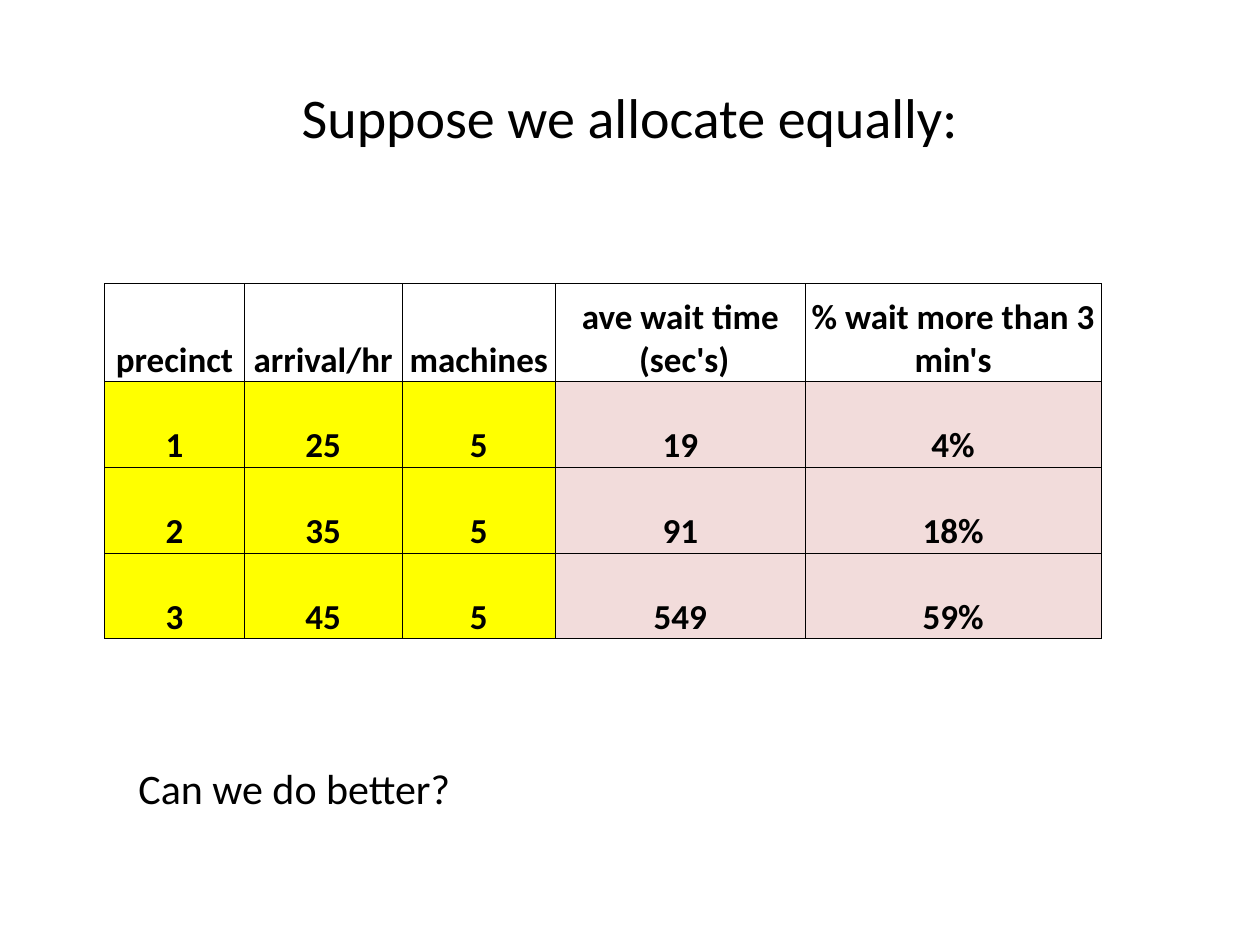
from lxml.etree import SubElement
from pptx import Presentation
from pptx.dml.color import RGBColor
from pptx.enum.text import MSO_ANCHOR, PP_ALIGN
from pptx.oxml.ns import qn
from pptx.util import Inches, Pt

BLACK = RGBColor(0, 0, 0)
YELLOW = RGBColor(0xFF, 0xFF, 0)
PINK = RGBColor(0xF2, 0xDC, 0xDB)

WIDTHS = [1.11, 1.25, 1.22, 1.98, 2.35]
HEIGHTS = [0.78, 0.68, 0.68, 0.68]
FILLS = [YELLOW] * 3 + [PINK] * 2
ROWS = [
    ["precinct", "arrival/hr", "machines", "ave wait time\n (sec's)",
     "% wait more than 3 min's"],
    ["1", "25", "5", "19", "4%"],
    ["2", "35", "5", "91", "18%"],
    ["3", "45", "5", "549", "59%"],
]


def assign(item, values):
    for name, value in values.items():
        setattr(item, name, value)


class Deck:
    font = "Calibri"
    color = BLACK
    line = Pt(0.5)

    def __init__(self):
        self.prs = Presentation()
        assign(self.prs, {"slide_width": Inches(10), "slide_height": Inches(7.5)})
        self.slide = self.prs.slides.add_slide(self.prs.slide_layouts[5])

    def label(self, frame, text, size, align, bold=False):
        frame.text = text
        for para in frame.paragraphs:
            para.alignment = align
            for run in para.runs:
                assign(run.font, {"name": self.font, "size": Pt(size), "bold": bold})
                run.font.color.rgb = self.color

    def title(self, text, left, top, width, height):
        shape = self.slide.shapes.title
        assign(shape, {"left": Inches(left), "top": Inches(top),
                       "width": Inches(width), "height": Inches(height)})
        shape.text_frame.vertical_anchor = MSO_ANCHOR.MIDDLE
        self.label(shape.text_frame, text, 32, PP_ALIGN.CENTER)

    def text(self, text, left, top, width, height):
        box = self.slide.shapes.add_textbox(*map(Inches, (left, top, width, height)))
        box.text_frame.word_wrap = True
        self.label(box.text_frame, text, 24, PP_ALIGN.LEFT)

    def border(self, cell):
        props = cell._tc.get_or_add_tcPr()
        for side in ("lnL", "lnR", "lnT", "lnB"):
            edge = SubElement(props, qn(f"a:{side}"), w=str(self.line))
            fill = SubElement(edge, qn("a:solidFill"))
            SubElement(fill, qn("a:srgbClr"), val=str(self.color))

    def cell(self, cell, text, fill):
        assign(cell, {"vertical_anchor": MSO_ANCHOR.BOTTOM,
                      "margin_left": Inches(0.01), "margin_right": Inches(0.01),
                      "margin_top": Inches(0.01), "margin_bottom": 0})
        self.label(cell.text_frame, text, 20, PP_ALIGN.CENTER, True)
        self.border(cell)
        if fill is None:
            cell.fill.background()
        else:
            cell.fill.solid()
            cell.fill.fore_color.rgb = fill

    def table(self, rows, left, top):
        size = map(Inches, (left, top, sum(WIDTHS), sum(HEIGHTS)))
        table = self.slide.shapes.add_table(len(rows), len(WIDTHS), *size).table
        assign(table, {"first_row": False, "horz_banding": False})
        for col, width in zip(table.columns, WIDTHS):
            col.width = Inches(width)
        for r, (row, height) in enumerate(zip(rows, HEIGHTS)):
            table.rows[r].height = Inches(height)
            for c, text in enumerate(row):
                self.cell(table.cell(r, c), text, FILLS[c] if r else None)


def main():
    deck = Deck()
    deck.title("Suppose we allocate equally:", 0.5, 0.3, 9, 1.25)
    deck.text("Can we do better?", 1, 6, 7.25, 0.5)
    deck.table(ROWS, 0.83, 2.25)
    deck.prs.save("out.pptx")


if __name__ == "__main__":
    main()
